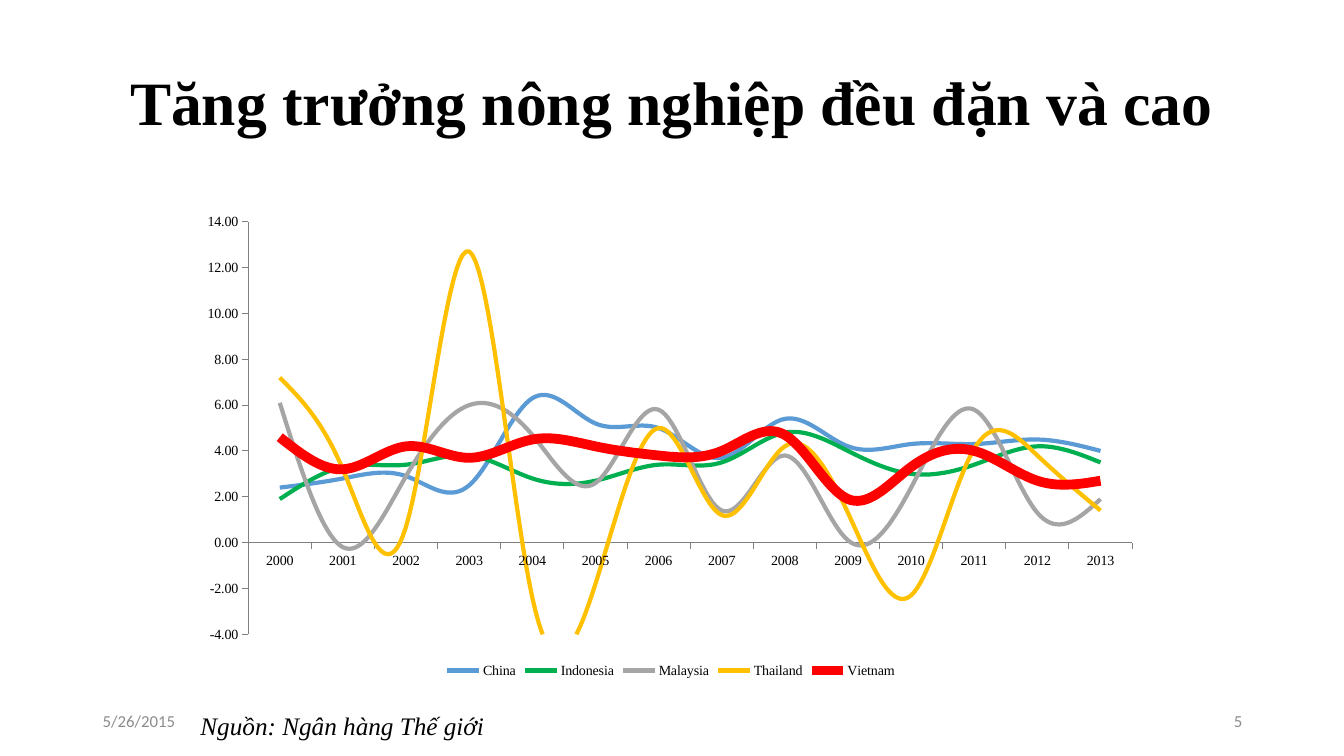
from lxml.etree import SubElement
from pptx import Presentation
from pptx.chart.data import CategoryChartData
from pptx.dml.color import RGBColor
from pptx.enum.chart import XL_CHART_TYPE, XL_LEGEND_POSITION, XL_MARKER_STYLE, XL_TICK_MARK
from pptx.enum.text import MSO_ANCHOR, PP_ALIGN
from pptx.oxml.ns import qn
from pptx.util import Inches, Pt

WIDTH, HEIGHT = Inches(13.33), Inches(7.5)
SERIF, SANS = "Times New Roman", "Calibri"
COLORS = {
    "text": "000000", "footer": "8C8C8C", "axis": "808080",
    "China": "5B9BD5", "Indonesia": "00B050", "Malaysia": "A5A5A5",
    "Thailand": "FFC000", "Vietnam": "FF0000",
}
YEARS = [str(year) for year in range(2000, 2014)]
GROWTH = {
    "China": (2.4, 2.8, 2.9, 2.5, 6.3, 5.2, 5, 3.7, 5.4, 4.2, 4.3, 4.3, 4.5, 4),
    "Indonesia": (1.9, 3.3, 3.4, 3.8, 2.8, 2.7, 3.4, 3.5, 4.8, 4, 3, 3.4, 4.2, 3.5),
    "Malaysia": (6.1, -0.2, 2.9, 6, 4.7, 2.6, 5.8, 1.4, 3.8, 0.1, 2.4, 5.8, 1.3, 1.9),
    "Thailand": (7.2, 3.2, 0.7, 12.7, -2.4, -1.8, 5, 1.2, 4.2, 1.3, -2.3, 4.1, 3.8, 1.4),
    "Vietnam": (4.6, 3.2, 4.2, 3.7, 4.5, 4.2, 3.8, 4, 4.7, 1.9, 3.3, 4, 2.7, 2.7),
}
# Left, top, width and height as shares of the slide
TITLE_BOX = (0.0893, 0.0773, 0.8575, 0.1253)
CHART_BOX = (0.1418, 0.268, 0.7149, 0.6347)
DATE_BOX = (0.069, 0.9267, 0.2251, 0.0533)
NUMBER_BOX = (0.7067, 0.9267, 0.2251, 0.0533)
SOURCE_BOX = (0.1418, 0.9333, 0.2836, 0.0533)
# The same, as shares of the chart
PLOT_BOX = {"x": 0.06, "y": 0.04, "w": 0.92, "h": 0.86}


def rgb(name):
    return RGBColor.from_string(COLORS[name])


def place(box):
    x, y, w, h = box
    return int(x * WIDTH), int(y * HEIGHT), int(w * WIDTH), int(h * HEIGHT)


def style_font(font, size, name, color="text", bold=False, italic=False):
    font.size, font.name, font.bold, font.italic = Pt(size), name, bold, italic
    font.color.rgb = rgb(color)


def write(sp, text, size, font, anchor=MSO_ANCHOR.MIDDLE, align=PP_ALIGN.LEFT, **look):
    tf = sp.text_frame
    tf.text = text
    tf.word_wrap = True
    tf.vertical_anchor = anchor
    p = tf.paragraphs[0]
    p.alignment = align
    style_font(p.runs[0].font, size, font, **look)
    return p


def add_title(s, text):
    title = s.shapes.title
    title.left, title.top, title.width, title.height = place(TITLE_BOX)
    write(title, text, 44, SERIF, bold=True).line_spacing = 0.9


def add_text(s, box, *args, **kwargs):
    write(s.shapes.add_textbox(*place(box)), *args, **kwargs)


def set_plot_area(chart):
    """Fix the inner plot area at PLOT_BOX."""
    plot_area = chart._chartSpace.chart.plotArea
    for old in plot_area.findall(qn("c:layout")):
        plot_area.remove(old)
    layout = SubElement(plot_area, qn("c:layout"))
    plot_area.insert(0, layout)
    manual = SubElement(layout, qn("c:manualLayout"))
    settings = {"layoutTarget": "inner", "xMode": "edge", "yMode": "edge", **PLOT_BOX}
    for tag, value in settings.items():
        SubElement(manual, qn(f"c:{tag}")).set("val", str(value))


def format_axes(chart):
    for axis in (chart.category_axis, chart.value_axis):
        axis.has_major_gridlines = False
        axis.major_tick_mark = XL_TICK_MARK.OUTSIDE
        axis.minor_tick_mark = XL_TICK_MARK.NONE
        axis.format.line.color.rgb = rgb("axis")
        axis.format.line.width = Pt(0.75)
    values = chart.value_axis
    values.minimum_scale, values.maximum_scale, values.major_unit = -4, 14, 2
    values.tick_labels.number_format = "0.00"
    values.tick_labels.number_format_is_linked = False


def add_growth_chart(s):
    data = CategoryChartData()
    data.categories = YEARS
    for country, values in GROWTH.items():
        data.add_series(country, values)
    chart = s.shapes.add_chart(XL_CHART_TYPE.LINE, *place(CHART_BOX), data).chart
    style_font(chart.font, 10, SERIF)
    chart.has_title = False
    chart.has_legend = True
    chart.legend.position = XL_LEGEND_POSITION.BOTTOM
    chart.legend.include_in_layout = False
    chart.plots[0].vary_by_categories = False
    for series in chart.plots[0].series:
        series.smooth = True
        series.marker.style = XL_MARKER_STYLE.NONE
        series.format.line.color.rgb = rgb(series.name)
        series.format.line.width = Pt(7 if series.name == "Vietnam" else 3)
    format_axes(chart)
    set_plot_area(chart)


def main():
    prs = Presentation()
    prs.slide_width, prs.slide_height = WIDTH, HEIGHT
    s = prs.slides.add_slide(prs.slide_layouts[5])
    add_title(s, "Tăng trưởng nông nghiệp đều đặn và cao")
    add_text(s, DATE_BOX, "5/26/2015", 12, SANS, color="footer")
    add_text(s, NUMBER_BOX, "5", 12, SANS, align=PP_ALIGN.RIGHT, color="footer")
    add_growth_chart(s)
    add_text(s, SOURCE_BOX, "Nguồn: Ngân hàng Thế giới", 18, SERIF,
             anchor=MSO_ANCHOR.TOP, italic=True)
    prs.save("out.pptx")


if __name__ == "__main__":
    main()
